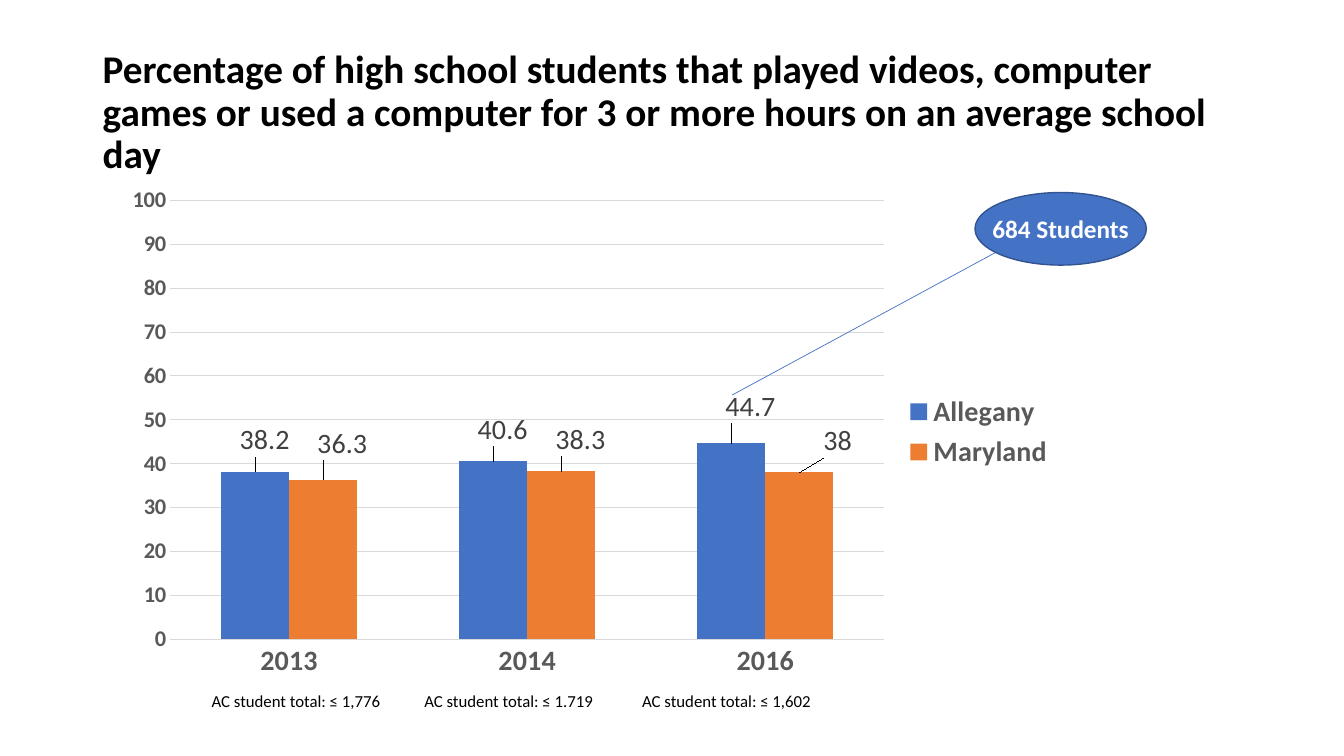
from dataclasses import dataclass

from lxml import etree
from pptx import Presentation
from pptx.chart.data import CategoryChartData
from pptx.dml.color import RGBColor
from pptx.enum.chart import XL_CHART_TYPE, XL_LABEL_POSITION, XL_LEGEND_POSITION, XL_TICK_MARK
from pptx.enum.shapes import MSO_CONNECTOR, MSO_SHAPE
from pptx.enum.text import MSO_ANCHOR, PP_ALIGN
from pptx.oxml import parse_xml
from pptx.oxml.ns import qn
from pptx.util import Pt

PX = 9144  # EMU in one px, 100 px to the inch
COLUMNS = XL_CHART_TYPE.COLUMN_CLUSTERED
OUTSIDE = XL_LABEL_POSITION.OUTSIDE_END
RIGHT = XL_LEGEND_POSITION.RIGHT
NO_TICK = XL_TICK_MARK.NONE
STRAIGHT = MSO_CONNECTOR.STRAIGHT
OVAL = MSO_SHAPE.OVAL
TOP, MIDDLE = MSO_ANCHOR.TOP, MSO_ANCHOR.MIDDLE
LEFT, CENTER = PP_ALIGN.LEFT, PP_ALIGN.CENTER
CHART_NS = "http://schemas.openxmlformats.org/drawingml/2006/chart"


@dataclass(frozen=True)
class Theme:
    font: str = "Calibri"
    black: str = "000000"
    white: str = "FFFFFF"
    blue: str = "4472C4"
    dark_blue: str = "325491"
    orange: str = "ED7D31"
    axis: str = "595959"
    label: str = "404040"
    grid: str = "D9D9D9"
    title: int = 28
    large: int = 20
    callout: int = 18
    scale: int = 16
    note: int = 12


def rgb(color):
    return RGBColor.from_string(color)


def set_font(font, name, size, color, bold=False):
    font.name, font.size, font.bold = name, Pt(size), bold
    font.color.rgb = rgb(color)


def manual_layout(**values):
    """Return a chart layout element with the given settings."""
    items = "".join(f'<c:{key} val="{value}"/>' for key, value in values.items())
    return parse_xml(f'<c:layout xmlns:c="{CHART_NS}"><c:manualLayout>{items}'
                     '</c:manualLayout></c:layout>')


class SlideBuilder:
    def __init__(self, slide, theme):
        self.shapes, self.theme = slide.shapes, theme

    def text(self, text, box, *, size, color, bold=False, align=LEFT, anchor=TOP,
             spacing=None):
        tf = self.shapes.add_textbox(*(n * PX for n in box)).text_frame
        tf.word_wrap, tf.vertical_anchor = True, anchor
        p = tf.paragraphs[0]
        p.alignment, p.line_spacing = align, spacing
        r = p.add_run()
        r.text = text
        set_font(r.font, self.theme.font, size, color, bold)

    def ellipse(self, box, fill, line):
        sp = self.shapes.add_shape(OVAL, *(n * PX for n in box))
        sp.shadow.inherit = False
        sp.fill.solid()
        sp.fill.fore_color.rgb = rgb(fill)
        sp.line.color.rgb = rgb(line)
        sp.line.width = Pt(1)

    def line(self, ends, color, width):
        cxn = self.shapes.add_connector(STRAIGHT, *(n * PX for n in ends))
        cxn.line.color.rgb = rgb(color)
        cxn.line.width = Pt(width)
        etree.SubElement(cxn.element.spPr, qn("a:effectLst"))

    def column_chart(self, box, categories, series):
        t = self.theme
        data = CategoryChartData()
        data.categories = categories
        for name, values, _, _ in series:
            data.add_series(name, values)
        chart = self.shapes.add_chart(COLUMNS, *(n * PX for n in box), data).chart
        set_font(chart.font, t.font, 10, t.black)
        chart.has_title = False

        # Plot area
        area = chart.element.find(".//" + qn("c:plotArea"))
        for old in area.findall(qn("c:layout")):
            area.remove(old)
        area.insert(0, manual_layout(layoutTarget="inner", xMode="edge", yMode="edge",
                                     x=0.067, y=0.056, w=0.745, h=0.842))
        plot = chart.plots[0]
        plot.gap_width, plot.overlap, plot.vary_by_categories = 150, 0, False

        # Axes and legend
        for axis, size in ((chart.category_axis, t.large), (chart.value_axis, t.scale)):
            axis.major_tick_mark = axis.minor_tick_mark = NO_TICK
            axis.format.line.fill.background()
            set_font(axis.tick_labels.font, t.font, size, t.axis, bold=True)
        scale = chart.value_axis
        scale.minimum_scale, scale.maximum_scale, scale.major_unit = 0, 100, 10
        scale.major_gridlines.format.line.color.rgb = rgb(t.grid)
        scale.major_gridlines.format.line.width = Pt(0.75)
        chart.has_legend = True
        chart.legend.position, chart.legend.include_in_layout = RIGHT, False
        set_font(chart.legend.font, t.font, t.large, t.axis, bold=True)

        # Columns and their shifted labels
        for ser, (_, _, color, shifts) in zip(plot.series, series):
            ser.format.fill.solid()
            ser.format.fill.fore_color.rgb = rgb(color)
            labels = ser.data_labels
            labels.show_value, labels.position = True, OUTSIDE
            set_font(labels.font, t.font, t.large, t.label)
            for i in range(len(shifts)):
                label = ser.points[i].data_label
                label.position = OUTSIDE
                set_font(label.font, t.font, t.large, t.label)
        marks = chart.element.iter(qn("c:dLbl"))
        shifts = [shift for *_, group in series for shift in group]
        for mark, (x, y) in zip(list(marks), shifts):
            mark.insert(1, manual_layout(x=x, y=y))


def main():
    prs = Presentation()
    prs.slide_width, prs.slide_height = 1333 * PX, 750 * PX
    t = Theme()
    s = SlideBuilder(prs.slides.add_slide(prs.slide_layouts[6]), t)

    # Title
    s.text("Percentage of high school students that played videos, computer games or "
           "used a computer for 3 or more hours on an average school day",
           (92, 40, 1150, 145), size=t.title, color=t.black, bold=True,
           anchor=MIDDLE, spacing=0.9)

    # Chart: name, values, colour, label shifts as parts of the chart size
    s.column_chart((105, 170, 951, 517), ("2013", "2014", "2016"), (
        ("Allegany", (38.2, 40.6, 44.7), t.blue,
         ((0.01, -0.02), (0.01, -0.02), (0.02, -0.03))),
        ("Maryland", (36.3, 38.3, 38), t.orange,
         ((0.02, -0.03), (0.02, -0.02), (0.04, -0.02))),
    ))

    # Callout
    s.line((726, 392, 994, 247), t.blue, 0.5)
    s.ellipse((967, 191, 170, 72), t.blue, t.dark_blue)
    s.text("684 Students", (967, 207, 170, 40), size=t.callout, color=t.white,
           bold=True, align=CENTER)

    # Student totals under the years
    for left, total in ((200, "1,776"), (411, "1.719"), (627, "1,602")):
        s.text(f"AC student total: ≤ {total}", (left, 680, 192, 30),
               size=t.note, color=t.black)

    prs.save("out.pptx")


if __name__ == "__main__":
    main()
